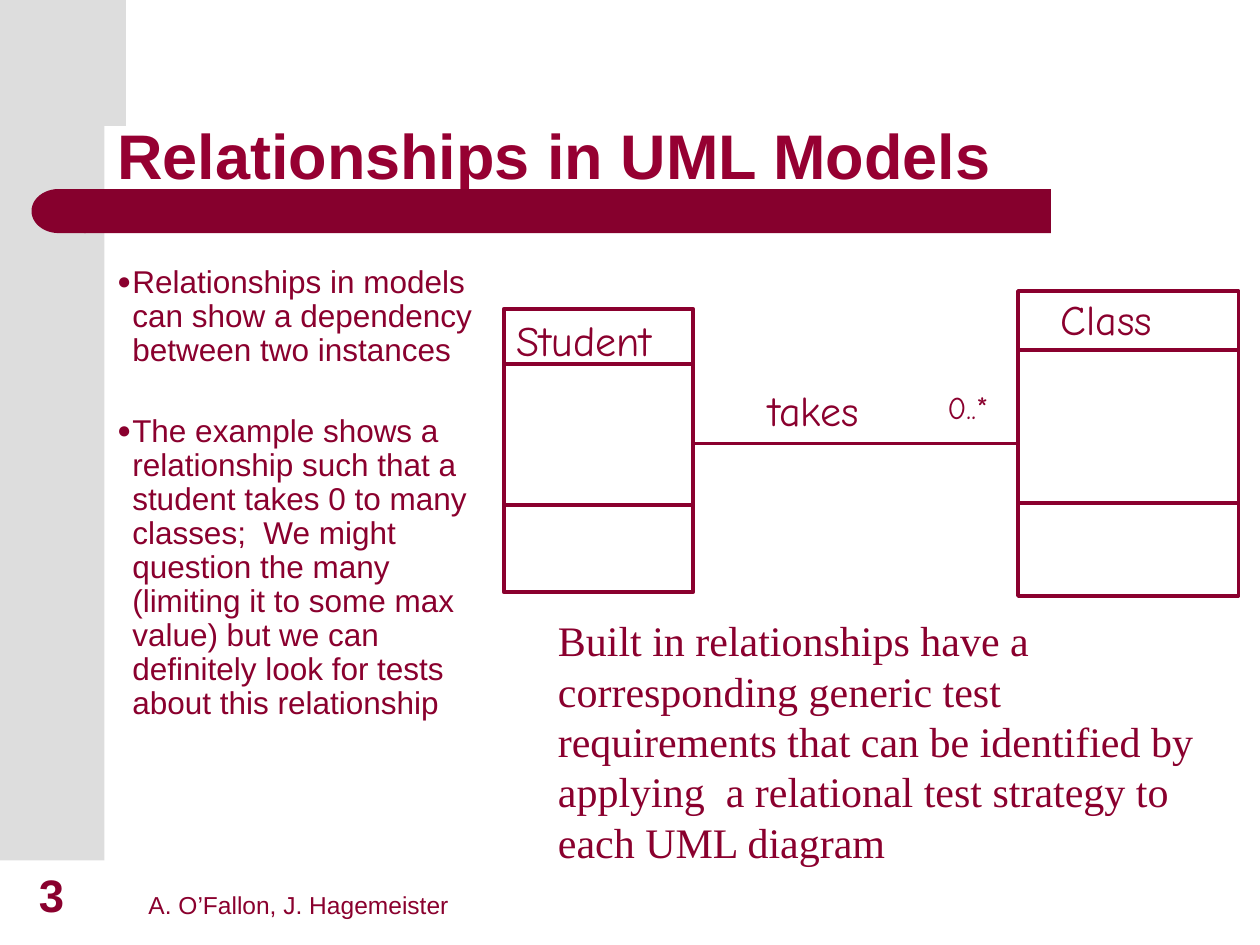
from math import cos, pi, sin

from lxml.etree import SubElement
from pptx import Presentation
from pptx.dml.color import RGBColor
from pptx.enum.shapes import MSO_CONNECTOR, MSO_SHAPE as Preset
from pptx.enum.text import MSO_ANCHOR as Anchor, MSO_AUTO_SIZE as AutoSize, PP_ALIGN as Align
from pptx.oxml.ns import qn
from pptx.util import Inches, Pt

MAROON, TITLE_RED, BAR_RED, GRAY = "8A002E", "960032", "86002D", "DDDDDD"
SANS, HAND, SERIF = "Arial", "Comic Neue", "Times New Roman"


def color(value):
    return RGBColor.from_string(value)


class UmlSlide:
    line_width = Pt(2.25)

    def __init__(self, slide):
        self.slide = slide
        self.shapes = slide.shapes

    def paint(self, shape, fill):
        shape.shadow.inherit = False
        shape.fill.solid()
        shape.fill.fore_color.rgb = color(fill)
        shape.line.fill.background()
        return shape

    def block(self, preset, box, fill):
        return self.paint(self.shapes.add_shape(preset, *map(Inches, box)), fill)

    def outline(self, points, fill):
        builder = self.shapes.build_freeform(*points[0], scale=Inches(1))
        builder.add_line_segments(points[1:], close=True)
        return self.paint(builder.convert_to_shape(), fill)

    def add_text(self, paragraph, text, size, font, ink=MAROON, bold=False):
        run = paragraph.add_run()
        run.text = text
        run.font.size = Pt(size)
        run.font.name = font
        run.font.bold = bold
        run.font.color.rgb = color(ink)

    def label(self, box, text, size, font, wrap=False, anchor=Anchor.TOP,
              align=Align.LEFT, bold=False):
        frame = self.shapes.add_textbox(*map(Inches, box)).text_frame
        frame.word_wrap = wrap
        frame.vertical_anchor = anchor
        paragraph = frame.paragraphs[0]
        paragraph.alignment = align
        self.add_text(paragraph, text, size, font, bold=bold)

    def place(self, placeholder, box, anchor):
        placeholder.left, placeholder.top, placeholder.width, placeholder.height = map(Inches, box)
        frame = placeholder.text_frame
        frame.auto_size = AutoSize.NONE
        frame.word_wrap = True
        frame.vertical_anchor = anchor
        return frame

    def title(self, box, text):
        paragraph = self.place(self.shapes.title, box, Anchor.BOTTOM).paragraphs[0]
        paragraph.alignment = Align.LEFT
        paragraph.line_spacing = 0.9
        self.add_text(paragraph, text, 36, SANS, TITLE_RED, bold=True)

    def bullets(self, box, points, gap):
        frame = self.place(self.slide.placeholders[1], box, Anchor.TOP)
        for index, point in enumerate(points):
            paragraph = frame.add_paragraph() if index else frame.paragraphs[0]
            paragraph.line_spacing = 0.9
            paragraph.space_before = Pt(gap if index else 0)
            properties = paragraph._p.get_or_add_pPr()
            properties.set("marL", str(Inches(0.12)))
            properties.set("indent", str(Inches(-0.12)))
            ink = SubElement(properties, qn("a:buClr"))
            SubElement(ink, qn("a:srgbClr"), val=MAROON)
            SubElement(properties, qn("a:buSzPct"), val="75000")
            SubElement(properties, qn("a:buChar"), char="●")
            self.add_text(paragraph, point, 18, SANS)

    def line(self, start, end):
        connector = self.shapes.add_connector(
            MSO_CONNECTOR.STRAIGHT, *map(Inches, (*start, *end)))
        connector.line.color.rgb = color(MAROON)
        connector.line.width = self.line_width
        SubElement(connector._element.spPr, qn("a:effectLst"))
        return connector

    def uml_class(self, box, dividers, name, name_box):
        left, _, width, _ = box
        frame = self.shapes.add_shape(Preset.RECTANGLE, *map(Inches, box))
        frame.shadow.inherit = False
        frame.fill.background()
        frame.line.color.rgb = color(MAROON)
        frame.line.width = self.line_width
        for y in dividers:
            self.line((left, y), (left + width, y))
        self.label(name_box, name, 24, HAND)
        return frame


def main():
    deck = Presentation()
    deck.slide_width, deck.slide_height = Inches(10), Inches(7.5)
    page = UmlSlide(deck.slides.add_slide(deck.slide_layouts[1]))

    page.block(Preset.RECTANGLE, (0, 0, 0.83, 6.83), GRAY)
    steps = 16
    angles = [pi / 2 * step / steps for step in range(steps + 1)]
    corner = [(1.16 - 0.33 * sin(a), 0.55 - 0.38 * cos(a)) for a in angles]
    page.outline([(0.5, 0), (3.5, 0), (3.5, 0.17), *corner, (0.83, 0.61), (0.5, 0.61)], GRAY)
    page.block(Preset.RECTANGLE, (0.67, 1.5, 7.67, 0.35), BAR_RED)
    page.block(Preset.FLOWCHART_DELAY, (0.25, 1.5, 0.43, 0.35), BAR_RED).rotation = 180

    page.label((1.08, 6.83, 3.75, 0.52), "A. O’Fallon, J. Hagemeister", 14, SANS,
               wrap=True, anchor=Anchor.BOTTOM)
    page.label((0.09, 6.83, 0.64, 0.53), "3", 26, SANS, wrap=True,
               anchor=Anchor.BOTTOM, align=Align.CENTER, bold=True)

    page.title((0.83, 0.33, 8.67, 1.25), "Relationships in UML Models")
    page.bullets((0.83, 2.06, 3.26, 3.67), [
        "Relationships in models can show a dependency between two instances",
        "The example shows a relationship such that a student takes 0 to many classes;  "
        "We might question the many (limiting it to some max value) but we can "
        "definitely look for tests about this relationship",
    ], gap=27)

    page.uml_class((4, 2.45, 1.5, 2.25), (2.89, 4.01), "Student", (4, 2.45, 1.47, 0.5))
    course = page.uml_class((8.08, 2.31, 1.75, 2.42), (2.78, 3.99), "Class",
                            (8.32, 2.28, 0.99, 0.5))
    takes = page.line((5.5, 3.52), (8.08, 3.52))
    takes.end_connect(course, 1)
    page.label((6, 3, 1.05, 0.5), "takes", 24, HAND)
    page.label((7.42, 3.03, 0.61, 0.4), "0..*", 18, HAND)
    page.label((4.33, 4.83, 5.33, 2.1),
               "Built in relationships have a corresponding generic test requirements that "
               "can be identified by applying  a relational test strategy to each UML diagram",
               24, SERIF, wrap=True)

    deck.save("out.pptx")


if __name__ == "__main__":
    main()
